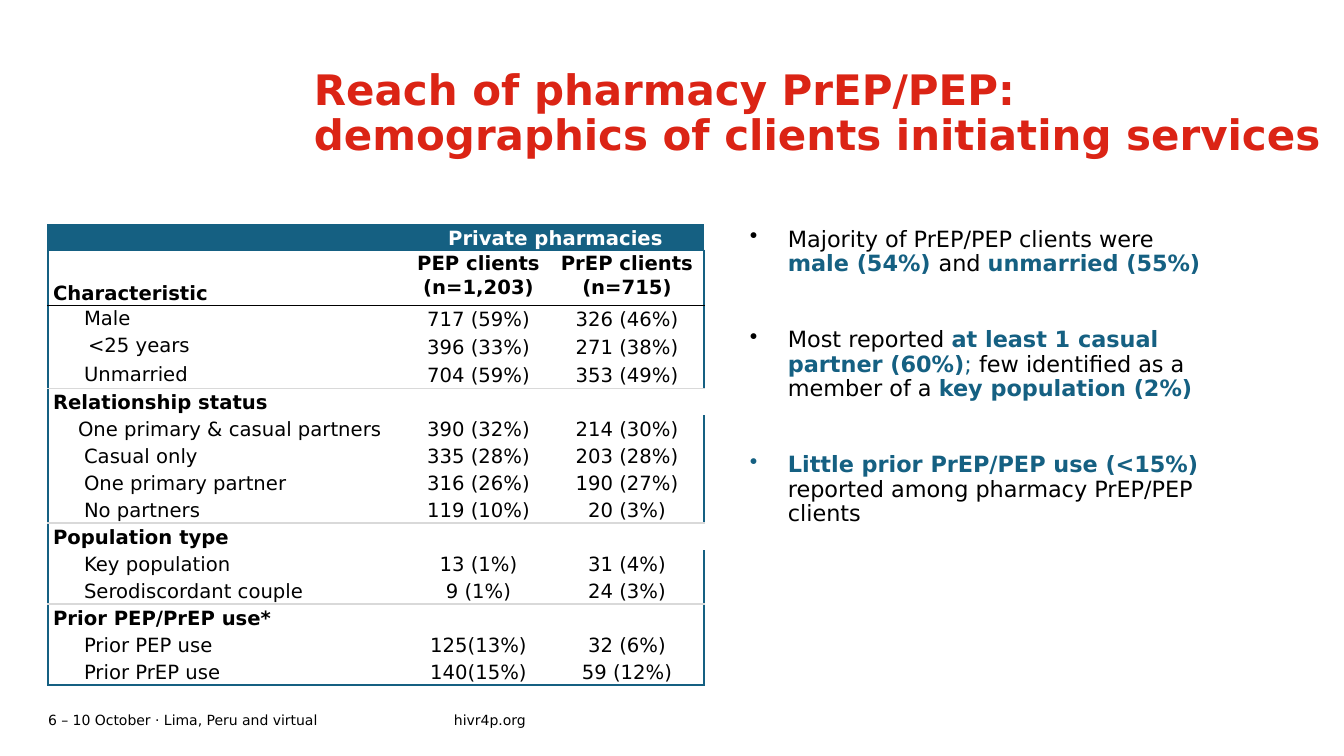
"""Builds the slide on who starts PrEP and PEP at private pharmacies."""
from pptx import Presentation
from pptx.dml.color import RGBColor
from pptx.enum.text import MSO_ANCHOR, PP_ALIGN
from pptx.oxml.xmlchemy import OxmlElement
from pptx.util import Pt

TOP, MID, LOW = MSO_ANCHOR.TOP, MSO_ANCHOR.MIDDLE, MSO_ANCHOR.BOTTOM
LEFT, MIDST = PP_ALIGN.LEFT, PP_ALIGN.CENTER
FONT = "DejaVu Sans"
BLUE = RGBColor(0x15, 0x60, 0x82)
RED = RGBColor(0xDB, 0x24, 0x15)
GREY = RGBColor(0xD9, 0xD9, 0xD9)
BLACK = RGBColor(0, 0, 0)
WHITE = RGBColor(255, 255, 255)

TITLE = "Reach of pharmacy PrEP/PEP:\vdemographics of clients initiating services"
FOOTER = [
    ("6 – 10 October · Lima, Peru and virtual", (48, 708, 405, 24)),
    ("hivr4p.org", (454, 708, 195, 24)),
]
POINTS = [
    [("Majority of PrEP/PEP clients were ", BLACK, False), ("male (54%) ", BLUE, True),
     ("and ", BLACK, False), ("unmarried (55%)", BLUE, True)],
    [("Most reported ", BLACK, False), ("at least 1 casual partner (60%)", BLUE, True),
     ("; ", BLUE, False), ("few identified as a member of a ", BLACK, False),
     ("key population (2%)", BLUE, True)],
    [("Little prior PrEP/PEP use (<15%) ", BLUE, True),
     ("reported among pharmacy PrEP/PEP clients", BLACK, False)],
]
ROWS = [
    ["", "Private pharmacies"],
    ["Characteristic", "PEP clients\n(n=1,203)", "PrEP clients\n(n=715)"],
    ["Male", "717 (59%)", "326 (46%)"],
    ["<25 years", "396 (33%)", "271 (38%)"],
    ["Unmarried", "704 (59%)", "353 (49%)"],
    ["Relationship status"],
    ["One primary & casual partners", "390 (32%)", "214 (30%)"],
    ["Casual only", "335 (28%)", "203 (28%)"],
    ["One primary partner", "316 (26%)", "190 (27%)"],
    ["No partners", "119 (10%)", "20 (3%)"],
    ["Population type"],
    ["Key population", "13 (1%)", "31 (4%)"],
    ["Serodiscordant couple", "9 (1%)", "24 (3%)"],
    ["Prior PEP/PrEP use*", "", ""],
    ["Prior PEP use", "125(13%)", "32 (6%)"],
    ["Prior PrEP use", "140(15%)", "59 (12%)"],
]
HEADS = (0, 1, 5, 10, 13)
INDENT = {3: 40, 6: 30}
COLS = (359, 143, 154)
HIGH = {0: 25, 1: 55, 3: 29}
RULES = {0: BLUE, 1: BLUE, 2: BLACK, 5: GREY, 10: GREY, 13: GREY, len(ROWS): BLUE}


def px(num):
    return round(num * 914400 / 100.8)


def style(item, size, color, bold=False):
    font = item.font
    font.name, font.size, font.bold = FONT, Pt(size), bold
    font.color.rgb = color


def add_box(slide, area, anchor=TOP):
    frame = slide.shapes.add_textbox(*map(px, area)).text_frame
    frame.word_wrap = True
    frame.vertical_anchor = anchor
    frame.margin_left = frame.margin_right = frame.margin_top = frame.margin_bottom = 0
    return frame


def add_line(slide, text, area, size, color, bold=False, anchor=TOP, space=1.0):
    frame = add_box(slide, area, anchor)
    frame.text = text
    para = frame.paragraphs[0]
    para.line_spacing = space
    for run in para.runs:
        style(run, size, color, bold)


def add_points(slide):
    frame = add_box(slide, (726, 228, 476, 453))
    for num, parts in enumerate(POINTS):
        para = frame.add_paragraph() if num else frame.paragraphs[0]
        props = para._p.get_or_add_pPr()
        props.set("marL", str(px(62)))
        props.set("indent", str(-px(38)))
        dot = OxmlElement("a:buChar")
        dot.set("char", "•")
        props.append(dot)
        para.line_spacing = 0.9
        if num:
            para.space_before = Pt(37.4)
        for text, color, bold in parts:
            run = para.add_run()
            run.text = text
            style(run, 16, color, bold)


def add_edge(cell, side, color):
    line = OxmlElement("a:ln" + side)
    line.set("w", str(Pt(1)))
    fill = OxmlElement("a:solidFill" if color else "a:noFill")
    if color:
        tone = OxmlElement("a:srgbClr")
        tone.set("val", str(color))
        fill.append(tone)
    line.append(fill)
    cell._tc.get_or_add_tcPr().append(line)


def fill_cell(cell, row, col, text):
    cell.margin_left = cell.margin_right = cell.margin_top = cell.margin_bottom = 0
    if row == 1:
        cell.vertical_anchor = TOP if col else LOW
    else:
        cell.vertical_anchor = MID if col or row > 4 else TOP
    add_edge(cell, "L", None if col else BLUE)
    add_edge(cell, "R", BLUE if col == len(COLS) - 1 else None)
    add_edge(cell, "T", RULES.get(row))
    add_edge(cell, "B", RULES.get(row + 1))
    if row:
        cell.fill.background()
    else:
        cell.fill.solid()
        cell.fill.fore_color.rgb = BLUE
    cell.text_frame.text = text
    for para in cell.text_frame.paragraphs:
        para.alignment = MIDST if col else LEFT
        para.line_spacing = 1.07
        if not col:
            indent = 5 if row in HEADS else INDENT.get(row, 36)
            para._p.get_or_add_pPr().set("marL", str(px(indent)))
        for run in para.runs:
            style(run, 14, BLACK if row else WHITE, row in HEADS)
        if not text:
            end = OxmlElement("a:endParaRPr")
            end.set("sz", "1400")
            para._p.append(end)


def add_grid(slide):
    highs = [HIGH.get(row, 27) for row in range(len(ROWS))]
    area = (48, 225, sum(COLS), sum(highs))
    grid = slide.shapes.add_table(len(ROWS), len(COLS), *map(px, area)).table
    grid.first_row = grid.horz_banding = False
    for col, wide in enumerate(COLS):
        grid.columns[col].width = px(wide)
    last = len(COLS) - 1
    for row, texts in enumerate(ROWS):
        grid.rows[row].height = px(highs[row])
        for col in range(len(COLS)):
            text = texts[col] if col < len(texts) else ""
            fill_cell(grid.cell(row, col), row, col, text)
        if len(texts) <= last:
            grid.cell(row, len(texts) - 1).merge(grid.cell(row, last))


def main():
    deck = Presentation()
    deck.slide_width, deck.slide_height = px(1344), px(756)
    slide = deck.slides.add_slide(deck.slide_layouts[6])
    for text, area in FOOTER:
        add_line(slide, text, area, 10, BLACK, anchor=MID)
    add_points(slide)
    add_line(slide, TITLE, (314, 69, 1023, 135), 30, RED, bold=True, space=0.9)
    add_grid(slide)
    deck.save("out.pptx")


if __name__ == "__main__":
    main()
